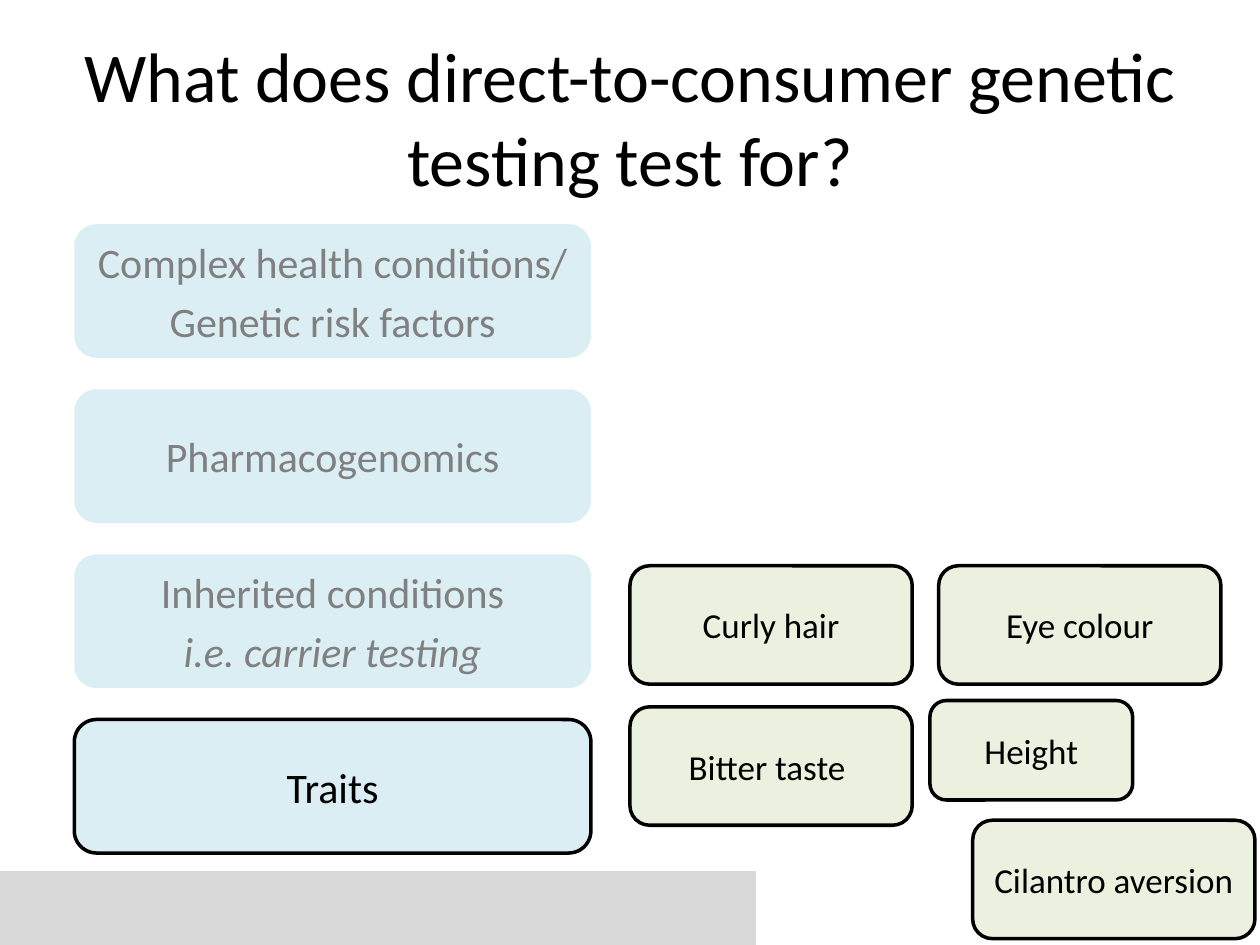
"""Build a slide on what direct-to-consumer genetic testing covers."""
from dataclasses import dataclass

from pptx import Presentation
from pptx import util as u
from pptx.dml.color import RGBColor
from pptx.enum import shapes, text

BLACK = RGBColor(0x00, 0x00, 0x00)
GREY = RGBColor(0x80, 0x80, 0x80)
BAND = RGBColor(0xD9, 0xD9, 0xD9)
BLUE = RGBColor(0xDB, 0xEE, 0xF4)
GREEN = RGBColor(0xEB, 0xF1, 0xDE)
FONT = "Calibri"
WIDE, HIGH = u.Inches(10), u.Inches(7.5)
ROUND = shapes.MSO_SHAPE.ROUNDED_RECTANGLE
TOP, PITCH = 23.73, 17.47


@dataclass
class Area:
    """Left, top, width and height as percent of the slide."""
    left: float
    top: float
    wide: float
    high: float

    def emu(self) -> tuple:
        """Return the area in slide units."""
        return (u.Emu(int(WIDE * self.left / 100)), u.Emu(int(HIGH * self.top / 100)),
                u.Emu(int(WIDE * self.wide / 100)), u.Emu(int(HIGH * self.high / 100)))


@dataclass
class Line:
    """One paragraph of a label."""
    words: str
    slant: bool = False


@dataclass
class Card:
    """A rounded box with centred lines."""
    area: Area
    lines: list[Line]
    fill: RGBColor
    size: int
    color: RGBColor = BLACK
    edge: bool = True


def row(index: int, lines: list[Line], live: bool = False) -> Card:
    """Place a test category in its row."""
    area = Area(5.9, TOP + index * PITCH, 41, 14.13)
    return Card(area, lines, BLUE, 24, BLACK if live else GREY, live)


def trait(words: str, left: float, top: float,
          wide: float = 22.4, high: float = 12.53) -> Card:
    """Describe one example of a trait."""
    return Card(Area(left, top, wide, high), [Line(words)], GREEN, 20)


CARDS = [
    row(0, [Line("Complex health conditions/"), Line("Genetic risk factors")]),
    row(1, [Line("Pharmacogenomics")]),
    row(2, [Line("Inherited conditions"), Line("i.e. carrier testing", True)]),
    trait("Curly hair", 50, 59.87),
    trait("Cilantro aversion", 77.2, 86.8),
    trait("Bitter taste ", 50, 74.8),
    trait("Height", 73.8, 74.13, 16.1, 10.53),
    trait("Eye colour", 74.5, 59.87),
    row(3, [Line("Traits")], True),
]


def write(frame, lines: list[Line], size: int, color: RGBColor) -> None:
    """Fill a text frame with centred lines."""
    frame.word_wrap = True
    frame.vertical_anchor = text.MSO_ANCHOR.MIDDLE
    for index, line in enumerate(lines):
        para = frame.add_paragraph() if index else frame.paragraphs[0]
        para.alignment = text.PP_ALIGN.CENTER
        if index:
            para.space_before = u.Pt(size * 0.2)
        run = para.add_run()
        run.text = line.words
        run.font.name = FONT
        run.font.size = u.Pt(size)
        run.font.italic = line.slant
        run.font.color.rgb = color


def block(slide, kind, area: Area, fill: RGBColor, edge: bool = False):
    """Add a flat shape, outlined on demand."""
    shape = slide.shapes.add_shape(kind, *area.emu())
    shape.shadow.inherit = False
    shape.fill.solid()
    shape.fill.fore_color.rgb = fill
    if edge:
        shape.line.color.rgb = BLACK
        shape.line.width = u.Pt(2)
    else:
        shape.line.fill.background()
    return shape


def main() -> None:
    """Draw the slide and save it."""
    deck = Presentation()
    deck.slide_width, deck.slide_height = WIDE, HIGH
    slide = deck.slides.add_slide(deck.slide_layouts[6])
    block(slide, shapes.MSO_SHAPE.RECTANGLE, Area(0, 92.2, 60, 7.8), BAND)
    title = slide.shapes.add_textbox(*Area(5, 4, 90, 16.67).emu())
    head = "What does direct-to-consumer genetic testing test for?"
    write(title.text_frame, [Line(head)], 40, BLACK)
    for card in CARDS:
        shape = block(slide, ROUND, card.area, card.fill, card.edge)
        write(shape.text_frame, card.lines, card.size, card.color)
    deck.save("out.pptx")


if __name__ == "__main__":
    main()
